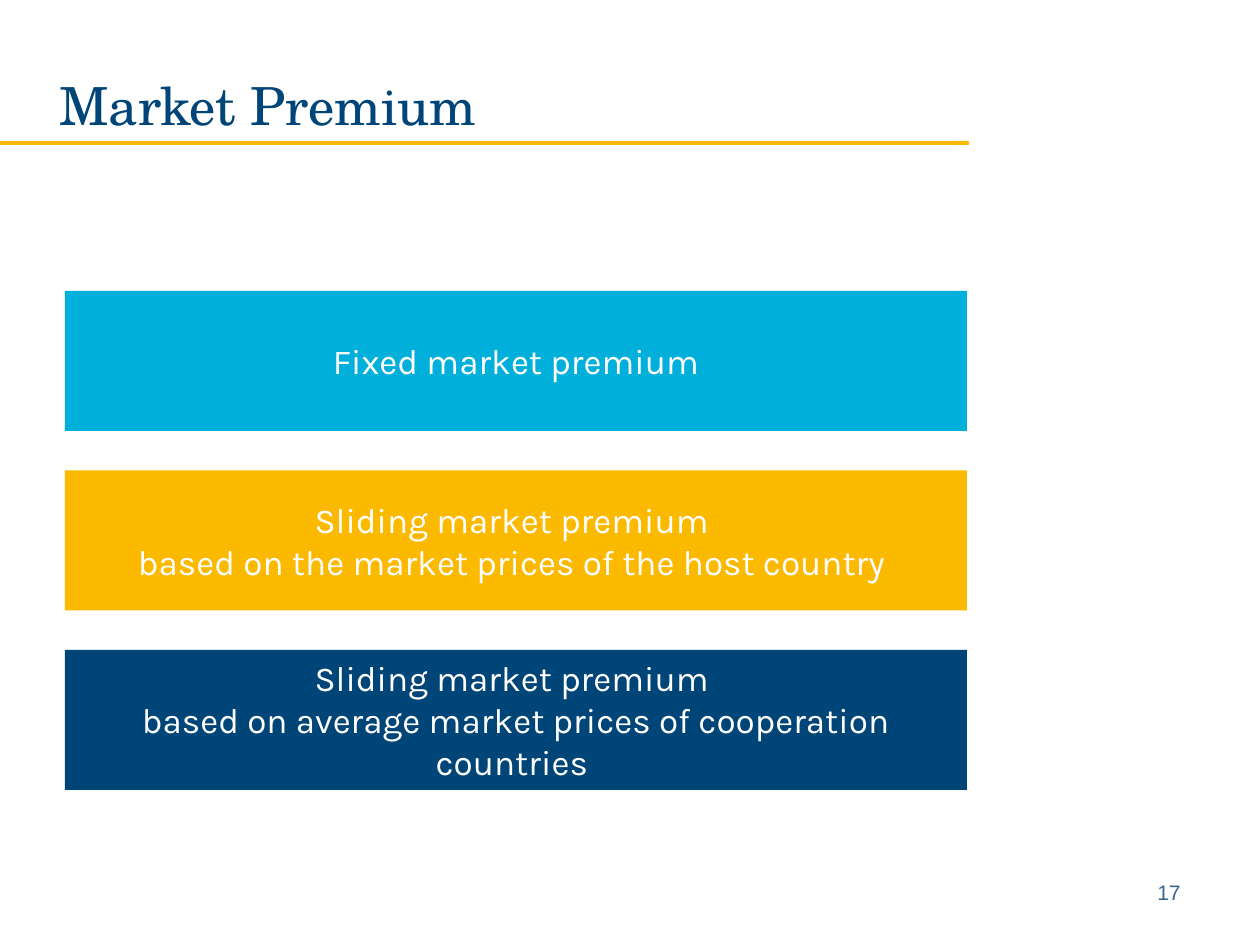
from pptx import Presentation
from pptx import util as u
from pptx.dml import color
from pptx.enum import shapes, text

PX = 914400 // 126  # EMU per px
COLORS = {"navy": "004577", "gold": "FBB900", "cyan": "00B0DB",
          "slate": "386691", "white": "FFFFFF"}

TITLE = "Market Premium"
PAGE_NUMBER = "17"
# The space at the end of a line counts in its centring
OPTIONS = [
    ("cyan", ["Fixed market premium"]),
    ("gold", ["Sliding market premium ",
              "based on the market prices of the host country "]),
    ("navy", ["Sliding market premium ",
              "based on average market prices of cooperation countries "]),
]
BAR_LEFT, BAR_WIDTH, BAR_HEIGHT = 65, 902, 140
FIRST_TOP, LAST_TOP = 291, 650


def rgb(name):
    return color.RGBColor.from_string(COLORS[name])


def emu(*lengths):
    return [round(length * PX) for length in lengths]


def write(box, lines, font, size, ink, align, anchor):
    frame = box.text_frame
    frame.word_wrap = True
    frame.vertical_anchor = anchor
    frame.text = "\n".join(lines)
    for para in frame.paragraphs:
        para.alignment = align
        para.font.name = font
        para.font.size = u.Pt(size)
        para.font.color.rgb = rgb(ink)


def add_bar(page, place, fill):
    bar = page.shapes.add_shape(shapes.MSO_SHAPE.RECTANGLE, *emu(*place))
    bar.shadow.inherit = False
    bar.fill.solid()
    bar.fill.fore_color.rgb = rgb(fill)
    bar.line.fill.background()
    return bar


def add_label(page, place, line, font, size, ink):
    box = page.shapes.add_textbox(*emu(*place))
    write(box, [line], font, size, ink, text.PP_ALIGN.LEFT, text.MSO_ANCHOR.TOP)


def main():
    deck = Presentation()
    deck.slide_width, deck.slide_height = emu(1260, 945)
    page = deck.slides.add_slide(deck.slide_layouts[6])

    # Title, rule and page number
    rule = add_bar(page, (0, 141, 968, 3), "gold")
    rule.line.color.rgb = rgb("gold")
    rule.line.width = u.Pt(0.25)
    add_label(page, (47, 67, 1026, 89), TITLE, "TeX Gyre Schola", 30, "navy")
    add_label(page, (1145, 873, 115, 66), PAGE_NUMBER, "Arial", 12, "slate")

    # Premium options, evenly stacked
    pitch = (LAST_TOP - FIRST_TOP) / (len(OPTIONS) - 1)
    for index, (fill, lines) in enumerate(OPTIONS):
        top = FIRST_TOP + index * pitch
        bar = add_bar(page, (BAR_LEFT, top, BAR_WIDTH, BAR_HEIGHT), fill)
        write(bar, lines, "Karla", 20, "white",
              text.PP_ALIGN.CENTER, text.MSO_ANCHOR.MIDDLE)

    deck.save("out.pptx")


if __name__ == "__main__":
    main()
